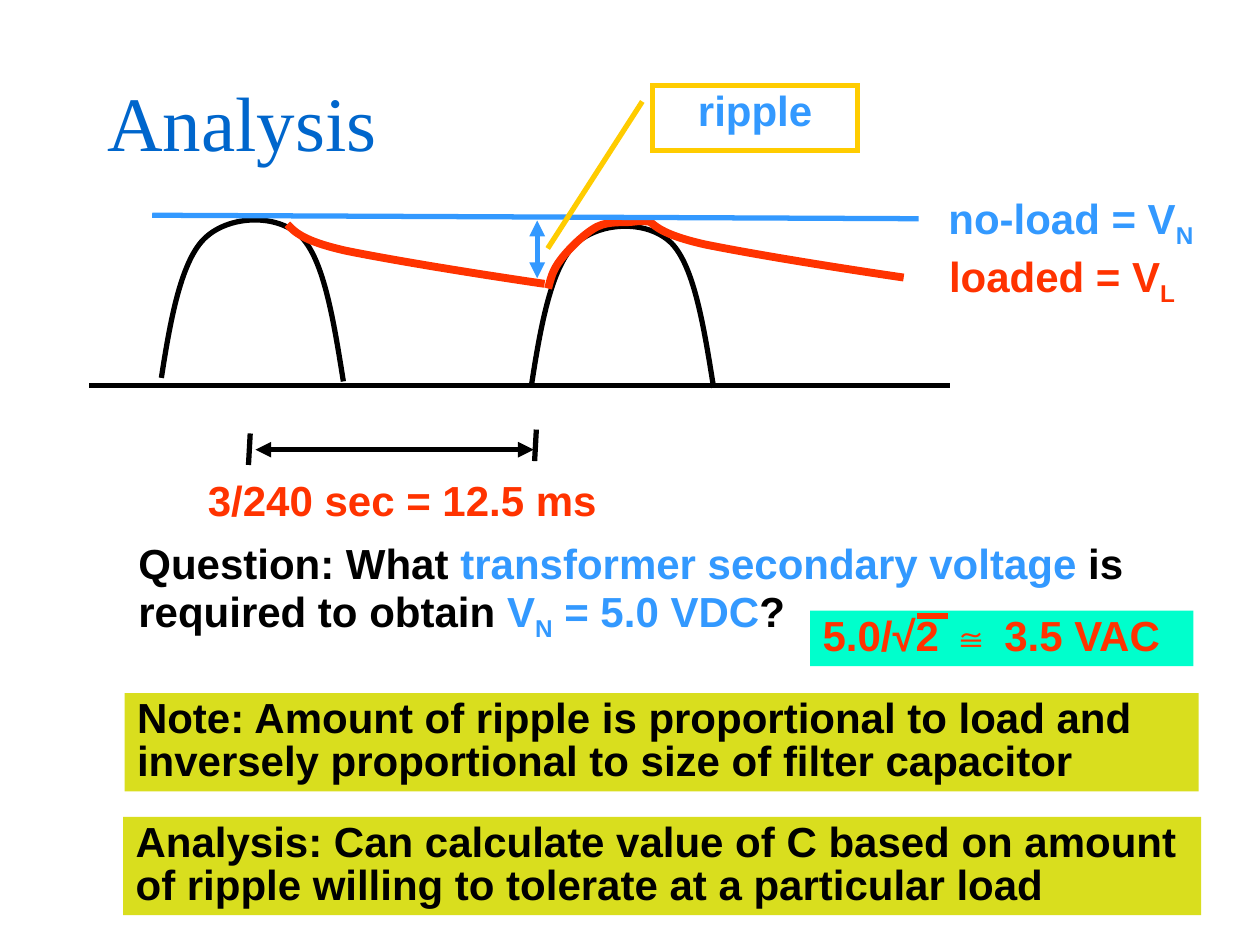
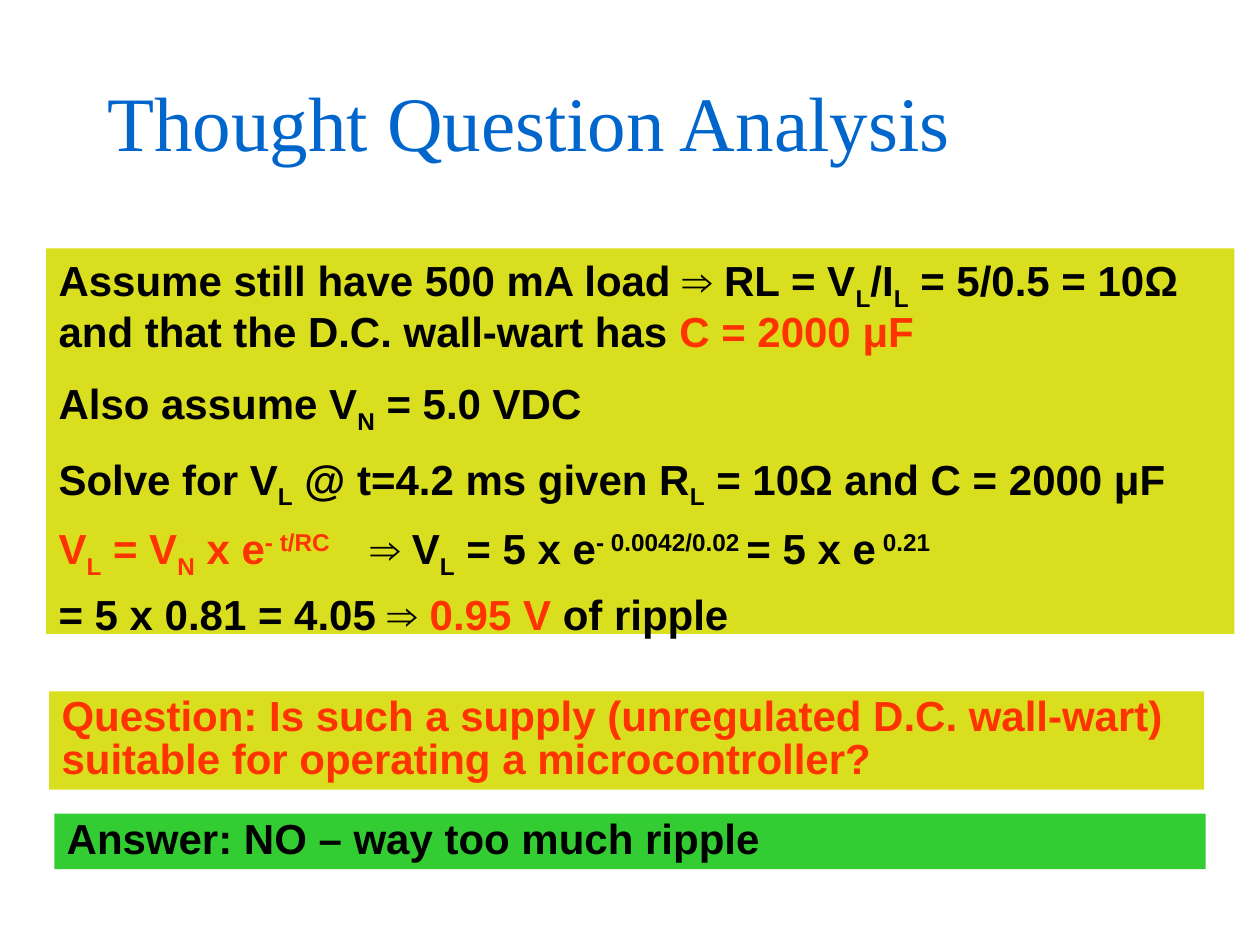
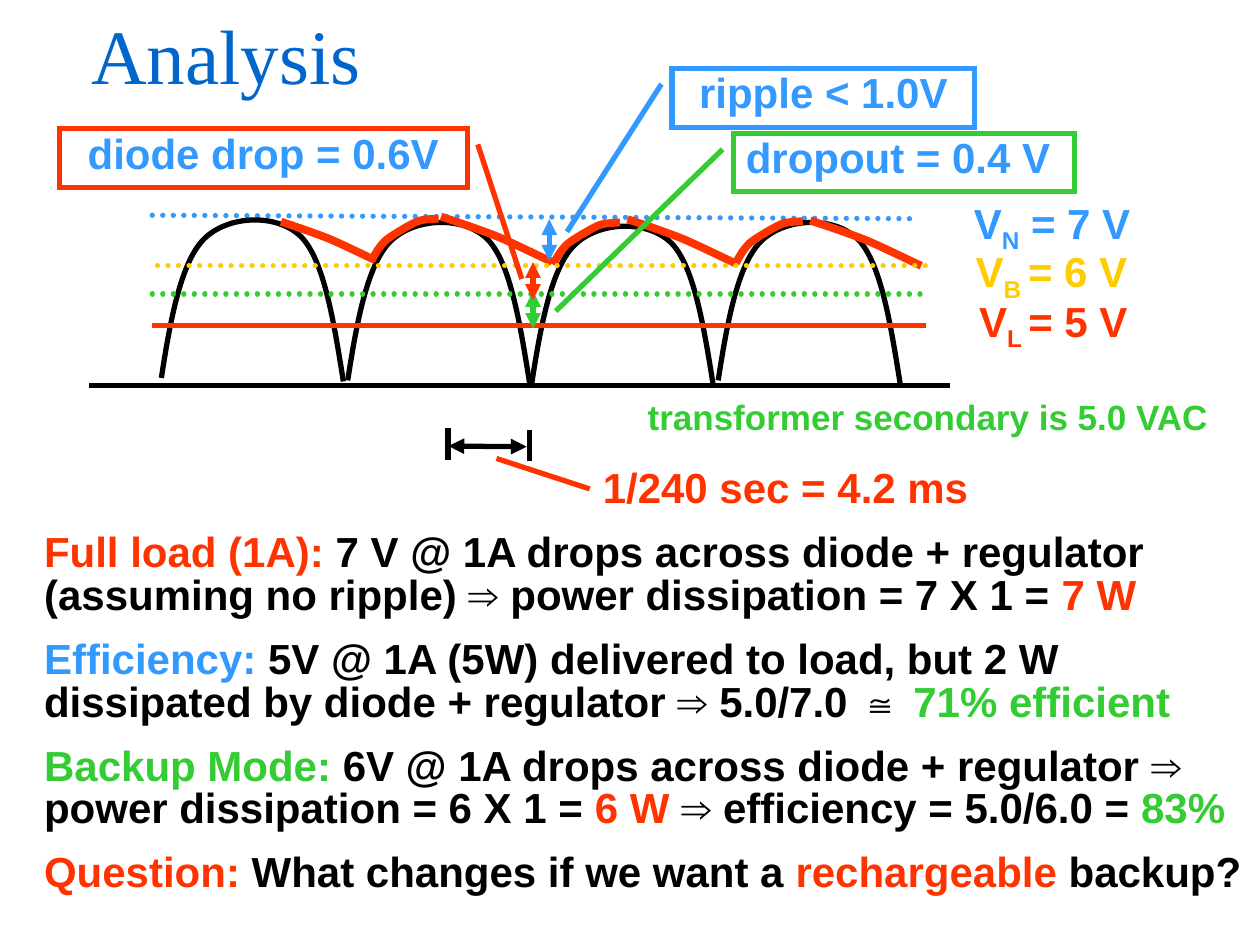
from lxml.etree import SubElement
from pptx import Presentation
from pptx.dml.color import RGBColor
from pptx.enum.dml import MSO_LINE
from pptx.enum.shapes import MSO_CONNECTOR, MSO_SHAPE
from pptx.enum.text import MSO_ANCHOR, MSO_AUTO_SIZE, PP_ALIGN
from pptx.oxml.ns import qn
from pptx.util import Pt

BLACK, RED, BLUE, GREEN = "000000", "FF3300", "3399FF", "33CC33"
YELLOW, OLIVE, TEAL, TITLE_BLUE = "FFCC00", "D9DE1E", "00FFCC", "0066CC"
LEFT, CENTER = PP_ALIGN.LEFT, PP_ALIGN.CENTER
SUB, SUPER = -25000, 30000


def paint(fill, colour):
    fill.solid()
    fill.fore_color.rgb = RGBColor.from_string(colour)


def write(frame, paragraphs, align=CENTER, size=24, line_spacing=0.85, gaps=(12,) * 5):
    frame.word_wrap = True
    frame.auto_size = MSO_AUTO_SIZE.NONE
    frame.vertical_anchor = MSO_ANCHOR.TOP
    for index, spans in enumerate(paragraphs):
        para = frame.add_paragraph() if index else frame.paragraphs[0]
        para.alignment = align
        para.line_spacing = line_spacing
        para.space_before = Pt(gaps[index] if index else 0)
        para.font.name, para.font.size, para.font.bold = "Arial", Pt(size), True
        for text, colour, *baseline in spans:
            span = para.add_run()
            span.text = text
            paint(span.font.fill, colour)
            if baseline:
                span.font._element.set("baseline", str(baseline[0]))


deck = Presentation()
deck.slide_width, deck.slide_height = Pt(720), Pt(540)

titles = [
    ("Analysis", 54, 24, 90),
    ("Thought Question Analysis", 54, 24, 90),
    ("Analysis", 45, 0, 61.2),
]
pages = []
for text, left, top, height in titles:
    page = deck.slides.add_slide(deck.slide_layouts[5])
    title = page.shapes.title
    title.left, title.top, title.width, title.height = Pt(left), Pt(top), Pt(612), Pt(height)
    title.text_frame.text = text
    title.text_frame.auto_size = MSO_AUTO_SIZE.NONE
    title.text_frame.vertical_anchor = MSO_ANCHOR.MIDDLE
    para = title.text_frame.paragraphs[0]
    para.alignment = LEFT
    para.font.name, para.font.size = "Times New Roman", Pt(44)
    paint(para.font.fill, TITLE_BLUE)
    pages.append(page)
ripple_page, question_page, regulator_page = pages

labels = [
    (ripple_page, 106.4, 272.2, 247, [("3/240 sec = 12.5 ms", RED)]),
    (ripple_page, 527, 141.1, 159.8, [("loaded = V", RED), ("L", RED, SUB)]),
    (ripple_page, 525.6, 108, 172.8, [("no-load = V", BLUE), ("N", BLUE, SUB)]),
    (regulator_page, 325.4, 264.5, 247, [("1/240 sec = 4.2 ms", RED)]),
    (regulator_page, 514.8, 111, 172.8, [("V", BLUE), ("N", BLUE, SUB), (" = 7 V", BLUE)]),
    (regulator_page, 512, 138.5, 177.8, [("V", YELLOW), ("B ", YELLOW, SUB), ("= 6 V", YELLOW)]),
    (regulator_page, 513, 167, 177.8, [("V", RED), ("L ", RED, SUB), ("= 5 V", RED)]),
]
for page, left, top, width, spans in labels:
    box = page.shapes.add_textbox(Pt(left), Pt(top), Pt(width), Pt(31.7))
    write(box.text_frame, [spans])

secondary = regulator_page.shapes.add_textbox(Pt(363), Pt(226.1), Pt(357), Pt(27.4))
write(secondary.text_frame, [[("transformer secondary is 5.0 VAC", GREEN)]], LEFT, 20)

statements = [
    (ripple_page, 72, 308.2, 612.7, 56.2, None, [[
        ("Question: What ", BLACK), ("transformer secondary voltage", BLUE),
        (" is required to obtain ", BLACK), ("V", BLUE), ("N", BLUE, SUB),
        (" = 5.0 VDC", BLUE), ("?", BLACK)]]),
    (ripple_page, 71.2, 396, 613.8, 56.2, OLIVE, [[
        ("Note: Amount of ripple is proportional to load and inversely "
         "proportional to size of filter capacitor", BLACK)]]),
    (ripple_page, 70.4, 466.8, 616, 56.2, OLIVE, [[
        ("Analysis: Can calculate value of C based on amount of ripple "
         "willing to tolerate at a particular load", BLACK)]]),
    (ripple_page, 463, 349, 219, 31.7, TEAL, [[("5.0/√2 ≅ 3.5 VAC", RED)]]),
    (question_page, 28.1, 395, 660, 56.2, OLIVE, [[
        ("Question: Is such a supply (unregulated D.C. wall-wart) "
         "suitable for operating a microcontroller?", RED)]]),
    (question_page, 31, 465, 658, 31.7, GREEN, [[
        ("Answer: NO – way too much ripple", BLACK)]]),
    (regulator_page, 18.1, 301.2, 701.9, 221.8, None, [
        [("Full load (1A):", RED),
         (" 7 V @ 1A drops across diode + regulator (assuming no ripple) "
          "⇒ power dissipation = 7 X 1 = ", BLACK), ("7 W", RED)],
        [("Efficiency: ", BLUE),
         ("5V @ 1A (5W) delivered to load, but 2 W dissipated by diode + "
          "regulator ⇒ 5.0/7.0 ≅ ", BLACK), ("71% efficient", GREEN)],
        [("Backup Mode: ", GREEN),
         ("6V @ 1A drops across diode + regulator ⇒ power dissipation = 6 X 1 = ", BLACK),
         ("6 W ", RED), ("⇒ efficiency = 5.0/6.0 = ", BLACK), ("83%", GREEN)],
        [("Question:", RED), (" What changes if we want a ", BLACK),
         ("rechargeable", RED), (" backup?", BLACK)]]),
]
for page, left, top, width, height, colour, paragraphs in statements:
    box = page.shapes.add_textbox(Pt(left), Pt(top), Pt(width), Pt(height))
    if colour:
        paint(box.fill, colour)
    write(box.text_frame, paragraphs, LEFT)

solution = question_page.shapes.add_textbox(Pt(26.4), Pt(142), Pt(679), Pt(220.3))
paint(solution.fill, OLIVE)
write(solution.text_frame, [
    [("Assume still have 500 mA load ⇒ RL = V", BLACK), ("L", BLACK, SUB), ("/I", BLACK),
     ("L", BLACK, SUB), (" = 5/0.5 = 10Ω and that the D.C. wall-wart has ", BLACK),
     ("C = 2000 μF", RED)],
    [("Also assume V", BLACK), ("N", BLACK, SUB), (" = 5.0 VDC", BLACK)],
    [("Solve for V", BLACK), ("L", BLACK, SUB), (" @ t=4.2 ms given R", BLACK),
     ("L", BLACK, SUB), (" = 10Ω and C = 2000 μF", BLACK)],
    [("V", RED), ("L", RED, SUB), (" = V", RED), ("N", RED, SUB), (" x e", RED),
     ("- t/RC", RED, SUPER), ("\t⇒ V", BLACK), ("L", BLACK, SUB), (" = 5 x e", BLACK),
     ("- 0.0042/0.02 ", BLACK, SUPER), ("= 5 x e", BLACK), (" 0.21", BLACK, SUPER)],
    [("= 5 x 0.81 = 4.05 ⇒ ", BLACK), ("0.95 V", RED), (" of ripple", BLACK)],
], LEFT, line_spacing=0.95, gaps=(0, 12, 12, 8.4, 8.4))
formula = solution.text_frame.paragraphs[3]._p.get_or_add_pPr()
tabs = SubElement(formula, qn("a:tabLst"))
SubElement(tabs, qn("a:tab"), pos=str(Pt(178)), algn="l")
formula.find(qn("a:defRPr")).addprevious(tabs)

arch = [(5, -32.5), (11, -65.5), (24, -79), (37.5, -93), (66, -94.5),
        (80, -80.5), (93, -67), (98.5, -32.5), (104, 2)]
long_sag = [(4.3, 4.3), (8.6, 9.4), (33, 15), (57.6, 20), (102, 27.4), (147, 34)]
long_rise = [(1.4, -5), (2.2, -10), (7.2, -16.5), (11.5, -22.3), (21, -31.7),
             (28, -35.3), (35.3, -38.9), (43.9, -37.4), (49, -38.2), (54, -38.9),
             (56.2, -38.2), (58.3, -38.2)]
sag = [(10.8, 3.6), (21.6, 7.2), (32.4, 11.5), (42.5, 15.8), (52.6, 20.9), (63.4, 25.9)]
rise = [(2.2, -4.3), (4.3, -7.9), (7.9, -11.5), (11.5, -14.4), (16.6, -17.3),
        (20.2, -19.4), (23, -20.9), (25.2, -22.3), (28, -23), (31, -23.8),
        (36, -23.8), (38.2, -24.1)]
waves = [
    (ripple_page, arch, BLACK, 3, [(92.2, 216, 1), (303.8, 219.6, 1)]),
    (ripple_page, long_sag, RED, 4.5, [(164.2, 128.2, 1), (369.4, 124.6, 1)]),
    (ripple_page, long_rise, RED, 4.5, [(313.2, 164.9, 1)]),
    (regulator_page, arch, BLACK, 3,
     [(92.2, 216, 1), (198.7, 217.4, 1), (303.8, 219.6, 1), (410.4, 217.4, 1)]),
    (regulator_page, sag, RED, 4.5,
     [(160.6, 126.7, 0.85), (252, 123.8, 1), (358.6, 125.3, 0.97), (463, 126, 1)]),
    (regulator_page, rise, RED, 4.5,
     [(212.4, 149, 1), (316.1, 151.2, 1), (420.5, 150.5, 1)]),
]
for page, outline, colour, weight, starts in waves:
    for left, top, stretch in starts:
        builder = page.shapes.build_freeform(Pt(left), Pt(top))
        builder.add_line_segments(
            [(Pt(left + x * stretch), Pt(top + y * stretch)) for x, y in outline], close=False)
        curve = builder.convert_to_shape()
        segments = list(curve._element.iter(qn("a:lnTo")))
        for first in range(0, len(segments), 3):
            bezier = SubElement(segments[first].getparent(), qn("a:cubicBezTo"))
            for segment in segments[first:first + 3]:
                bezier.append(segment[0])
                segment.getparent().remove(segment)
        curve.shadow.inherit = False
        curve.fill.background()
        paint(curve.line.fill, colour)
        curve.line.width = Pt(weight)

SOLID, DOTTED, ARROWS = "solid", "dotted", "arrows"
lines = [
    (ripple_page, 51, 220.3, 543, 220.3, BLACK, SOLID),
    (ripple_page, 143, 247.7, 142, 265.7, BLACK, SOLID),
    (ripple_page, 306.5, 245.5, 305.5, 263.5, BLACK, SOLID),
    (ripple_page, 146, 257, 305, 257, BLACK, ARROWS),
    (ripple_page, 307, 126, 307, 159, BLUE, ARROWS),
    (ripple_page, 87, 123, 525, 125, BLUE, SOLID),
    (ripple_page, 524, 352, 542, 352, RED, SOLID),
    (regulator_page, 51, 220.3, 543, 220.3, BLACK, SOLID),
    (regulator_page, 256, 244.8, 256, 262.8, BLACK, SOLID),
    (regulator_page, 302.4, 245.5, 302.4, 263.5, BLACK, SOLID),
    (regulator_page, 256.3, 254.9, 301, 255.3, BLACK, ARROWS),
    (regulator_page, 283.7, 262, 337, 279.4, RED, SOLID),
    (regulator_page, 87, 123, 525, 125, BLUE, DOTTED),
    (regulator_page, 90, 151.9, 532, 151.9, YELLOW, DOTTED),
    (regulator_page, 87, 168, 529, 168, GREEN, DOTTED),
    (regulator_page, 87, 186, 529, 186, RED, SOLID),
    (regulator_page, 313.9, 125.3, 313.9, 149, BLUE, ARROWS),
    (regulator_page, 304.6, 166.3, 304.6, 187.9, GREEN, ARROWS),
    (regulator_page, 304.6, 149.8, 304.6, 171.4, RED, ARROWS),
]
for page, x1, y1, x2, y2, colour, style in lines:
    line = page.shapes.add_connector(MSO_CONNECTOR.STRAIGHT, Pt(x1), Pt(y1), Pt(x2), Pt(y2))
    paint(line.line.fill, colour)
    line.line.width = Pt(3)
    stroke = line._element.spPr.find(qn("a:ln"))
    if style == DOTTED:
        line.line.dash_style = MSO_LINE.ROUND_DOT
        stroke.set("cap", "rnd")
        if colour == BLUE:
            page.shapes._spTree.insert(2, line._element)
    if style == ARROWS:
        for end in ("a:headEnd", "a:tailEnd"):
            SubElement(stroke, qn(end), type="triangle")
    SubElement(line._element.spPr, qn("a:effectLst"))

callouts = [
    (ripple_page, "ripple", 373, 49, 117, 37, YELLOW, (0.243, -0.051, 2.514, -0.513)),
    (regulator_page, "ripple < 1.0V", 384, 39, 173, 33.8, BLUE, (0.268, -0.035, 2.766, -0.347)),
    (regulator_page, "dropout = 0.4 V ", 419, 76.3, 195, 33, GREEN, (0.274, -0.031, 3.076, -0.52)),
    (regulator_page, "diode drop = 0.6V", 34, 73.5, 233, 33.8, RED, (0.268, 1.026, 2.543, 1.134)),
]
for page, text, left, top, width, height, colour, pointer in callouts:
    callout = page.shapes.add_shape(
        MSO_SHAPE.LINE_CALLOUT_1, Pt(left), Pt(top), Pt(width), Pt(height))
    for index, ratio in enumerate(pointer):
        callout.adjustments[index] = ratio
    callout.shadow.inherit = False
    callout.fill.background()
    paint(callout.line.fill, colour)
    callout.line.width = Pt(3)
    SubElement(callout._element.spPr.find(qn("a:ln")), qn("a:miter"), lim="800000")
    write(callout.text_frame, [[(text, BLUE)]])

deck.save("out.pptx")
